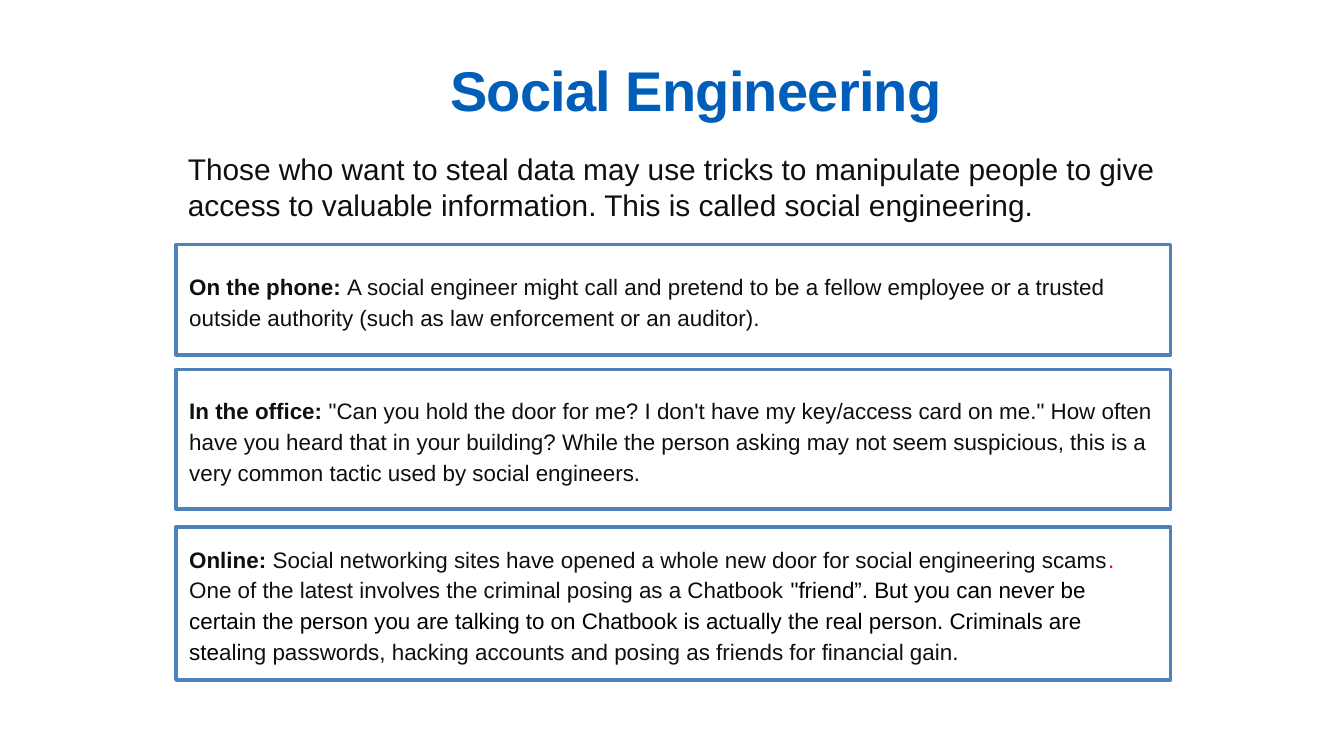
from pptx import Presentation
from pptx.dml.color import RGBColor
from pptx.enum import shapes, text
from pptx.util import Inches, Pt

BLUE = RGBColor(0x00, 0x5E, 0xB8)
BORDER = RGBColor(0x4F, 0x81, 0xBD)
INK = RGBColor(0x0F, 0x0F, 0x0F)
BLACK = RGBColor(0, 0, 0)
RED = RGBColor(0xFF, 0, 0)
WHITE = RGBColor(0xFF, 0xFF, 0xFF)

TITLE = "Social Engineering"
INTRO = ("Those who want to steal data may use tricks to manipulate people to give "
         "access to valuable information. This is called social engineering.")

# Each tactic: top, height, label, coloured pieces of its description
TACTICS = [
    (1.82, 0.82, "On the phone: ", [
        ("A social engineer might call and pretend to be a fellow employee or a trusted "
         "outside authority (such as law enforcement or an auditor).", INK)]),
    (2.75, 1.04, "In the office: ", [
        ("\"Can you hold the door for me? I don't have my key/access card on me.\" "
         "How often have you heard that in your building? While the person asking may "
         "not seem suspicious, this is a very common tactic used by social engineers.", INK)]),
    (3.92, 1.14, "Online: ", [
        ("Social networking sites have opened a whole new door for social engineering scams", INK),
        (". ", RED),
        ("One of the latest involves the criminal posing as a Chatbook ", INK),
        ("\"friend”. But you can never be certain the person you are talking to on Chatbook "
         "is actually the real person. Criminals are ste", BLACK),
        ("aling passwords, hacking accounts and posing as friends for financial gain.", INK)]),
]
SLIDE_WIDTH = Inches(10)
SLIDE_HEIGHT = SLIDE_WIDTH * 9 // 16
LEFT, WIDTH = 1.31, 7.4


def add_text(paragraph, words, size=12, color=INK, bold=False, spacing=None):
    run = paragraph.add_run()
    run.text = words
    run.font.name = "Arial"
    run.font.size = Pt(size)
    run.font.bold = bold
    run.font.color.rgb = color
    if spacing is not None:
        run.font._element.set("spc", str(round(spacing * 100)))


def add_text_box(slide, left, top, width, height, words, margin=None, **style):
    frame = slide.shapes.add_textbox(*map(Inches, (left, top, width, height))).text_frame
    frame.word_wrap = True
    if margin is not None:
        frame.margin_left = frame.margin_right = Inches(margin)
        frame.margin_top = frame.margin_bottom = Inches(margin)
    add_text(frame.paragraphs[0], words, **style)


def add_tactic(slide, top, height, label, pieces):
    shape = slide.shapes.add_shape(shapes.MSO_SHAPE.RECTANGLE,
                                   *map(Inches, (LEFT, top, WIDTH, height)))
    shape.shadow.inherit = False
    shape.fill.solid()
    shape.fill.fore_color.rgb = WHITE
    shape.line.color.rgb = BORDER
    shape.line.width = Pt(2)
    frame = shape.text_frame
    frame.word_wrap = True
    frame.vertical_anchor = text.MSO_ANCHOR.MIDDLE
    paragraph = frame.paragraphs[0]
    paragraph.alignment = text.PP_ALIGN.LEFT
    paragraph.line_spacing = 1.15
    add_text(paragraph, label, bold=True)
    for words, color in pieces:
        add_text(paragraph, words, color=color)


def main():
    presentation = Presentation()
    presentation.slide_width, presentation.slide_height = SLIDE_WIDTH, SLIDE_HEIGHT
    slide = presentation.slides.add_slide(presentation.slide_layouts[6])
    add_text_box(slide, 3.35, 0.41, 5.08, 0.58, TITLE, margin=0,
                 size=30, color=BLUE, bold=True, spacing=-0.4)
    for tactic in TACTICS:
        add_tactic(slide, *tactic)
    add_text_box(slide, 1.3, 1.07, WIDTH, 0.64, INTRO, size=16)
    presentation.save("out.pptx")


if __name__ == "__main__":
    main()
